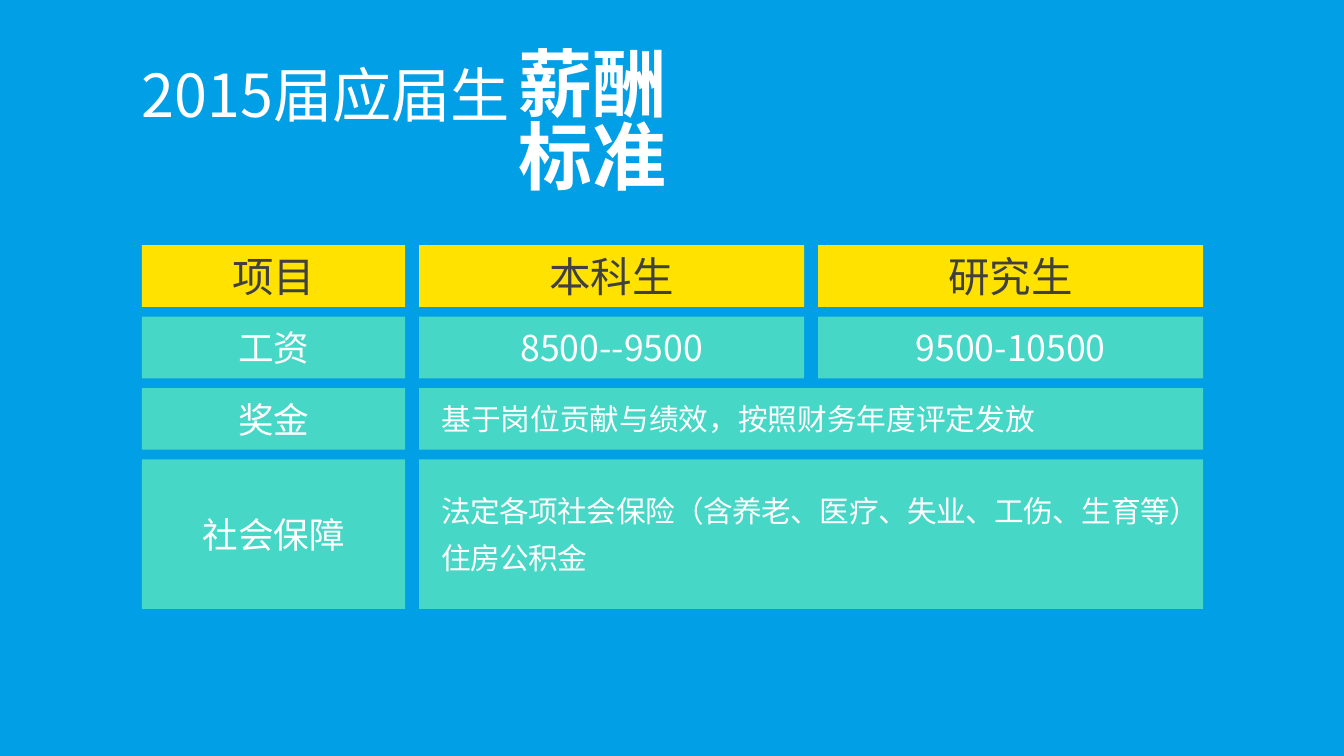
from dataclasses import dataclass

from lxml.etree import SubElement
from pptx import Presentation
from pptx.dml.color import RGBColor
from pptx.enum.shapes import MSO_SHAPE as Shape
from pptx.enum.text import MSO_ANCHOR as Anchor, PP_ALIGN as Align
from pptx.oxml.ns import qn
from pptx.util import Cm, Pt


@dataclass(frozen=True)
class Theme:
    font: str = "Noto Sans CJK SC"
    background: str = "009FE6"
    header: str = "FFE200"
    body: str = "47D7C6"
    dark: str = "404040"
    light: str = "FFFFFF"
    title_size: int = 40
    emphasis_size: int = 50
    header_size: int = 28
    label_size: int = 24
    detail_size: int = 20


def write(frame, text, theme, size, color, bold=False, align=Align.LEFT,
          anchor=Anchor.TOP, left_inset=0, line_spacing=None, gap=0, tracking=0):
    """Fill a text frame, one paragraph for each line of text."""
    frame.word_wrap = True
    frame.vertical_anchor = anchor
    frame.margin_left = Cm(left_inset)
    frame.margin_top = frame.margin_right = frame.margin_bottom = 0
    for index, line in enumerate(text.split("\n")):
        paragraph = frame.add_paragraph() if index else frame.paragraphs[0]
        paragraph.alignment = align
        paragraph.line_spacing = line_spacing
        paragraph.space_before = Pt(gap if index else 0)
        run = paragraph.add_run()
        run.text = line
        run.font.name = theme.font
        run.font.size = Pt(size)
        run.font.bold = bold
        run.font.color.rgb = RGBColor.from_string(color)
        properties = run.font._element
        SubElement(properties, qn("a:ea")).set("typeface", theme.font)
        if tracking:
            properties.set("spc", str(round(tracking * 100)))


class SlideBuilder:
    def __init__(self, slide, theme):
        self.slide = slide
        self.theme = theme
        fill = slide.background.fill
        fill.solid()
        fill.fore_color.rgb = RGBColor.from_string(theme.background)

    def heading(self, text, left, top, width, height, **style):
        box = self.slide.shapes.add_textbox(Cm(left), Cm(top), Cm(width), Cm(height))
        write(box.text_frame, text, self.theme, color=self.theme.light, **style)

    def cell(self, text, left, top, width, height, fill, **style):
        tile = self.slide.shapes.add_shape(
            Shape.RECTANGLE, Cm(left), Cm(top), Cm(width), Cm(height))
        tile.shadow.inherit = False
        tile.fill.solid()
        tile.fill.fore_color.rgb = RGBColor.from_string(fill)
        tile.line.fill.background()
        write(tile.text_frame, text, self.theme, anchor=Anchor.MIDDLE, **style)


# Grid in centimetres
LEFT, TOP = 3.38, 5.84
COLUMN_GAP, ROW_GAP = 0.33, 0.23
COLUMN_WIDTHS = (6.27, 9.17, 9.17)
ROW_HEIGHTS = (1.47, 1.47, 1.47, 3.56)

PAY_ROWS = (
    ("项目", "本科生", "研究生"),
    ("工资", "8500--9500", "9500-10500"),
    ("奖金", "基于岗位贡献与绩效，按照财务年度评定发放"),
    ("社会保障", "法定各项社会保险（含养老、医疗、失业、工伤、生育等）\n住房公积金"),
)


def main():
    theme = Theme()
    deck = Presentation()
    deck.slide_width, deck.slide_height = Cm(32), Cm(18)
    builder = SlideBuilder(deck.slides.add_slide(deck.slide_layouts[6]), theme)

    # Title
    builder.heading("2015届应届生", LEFT, 1.65, 9.04, 1.7,
                    size=theme.title_size, line_spacing=0.85)
    builder.heading("薪酬标准", 12.34, 1.27, 4.42, 2.79,
                    size=theme.emphasis_size, bold=True, line_spacing=0.82)

    # Pay grid: a row with two entries merges its last two columns
    header = dict(fill=theme.header, size=theme.header_size,
                  color=theme.dark, align=Align.CENTER)
    label = dict(fill=theme.body, size=theme.label_size,
                 color=theme.light, align=Align.CENTER)
    detail = dict(fill=theme.body, size=theme.detail_size,
                  color=theme.light, left_inset=0.53, gap=8)
    merged_width = sum(COLUMN_WIDTHS[1:]) + COLUMN_GAP
    top = TOP
    for row, (entries, height) in enumerate(zip(PAY_ROWS, ROW_HEIGHTS)):
        merged = len(entries) == 2
        widths = (COLUMN_WIDTHS[0], merged_width) if merged else COLUMN_WIDTHS
        left = LEFT
        for column, (entry, width) in enumerate(zip(entries, widths)):
            style = header if row == 0 else detail if merged and column else label
            tracking = -0.4 if "\n" in entry else 0
            builder.cell(entry, left, top, width, height, tracking=tracking, **style)
            left += width + COLUMN_GAP
        top += height + ROW_GAP

    deck.save("out.pptx")


if __name__ == "__main__":
    main()
